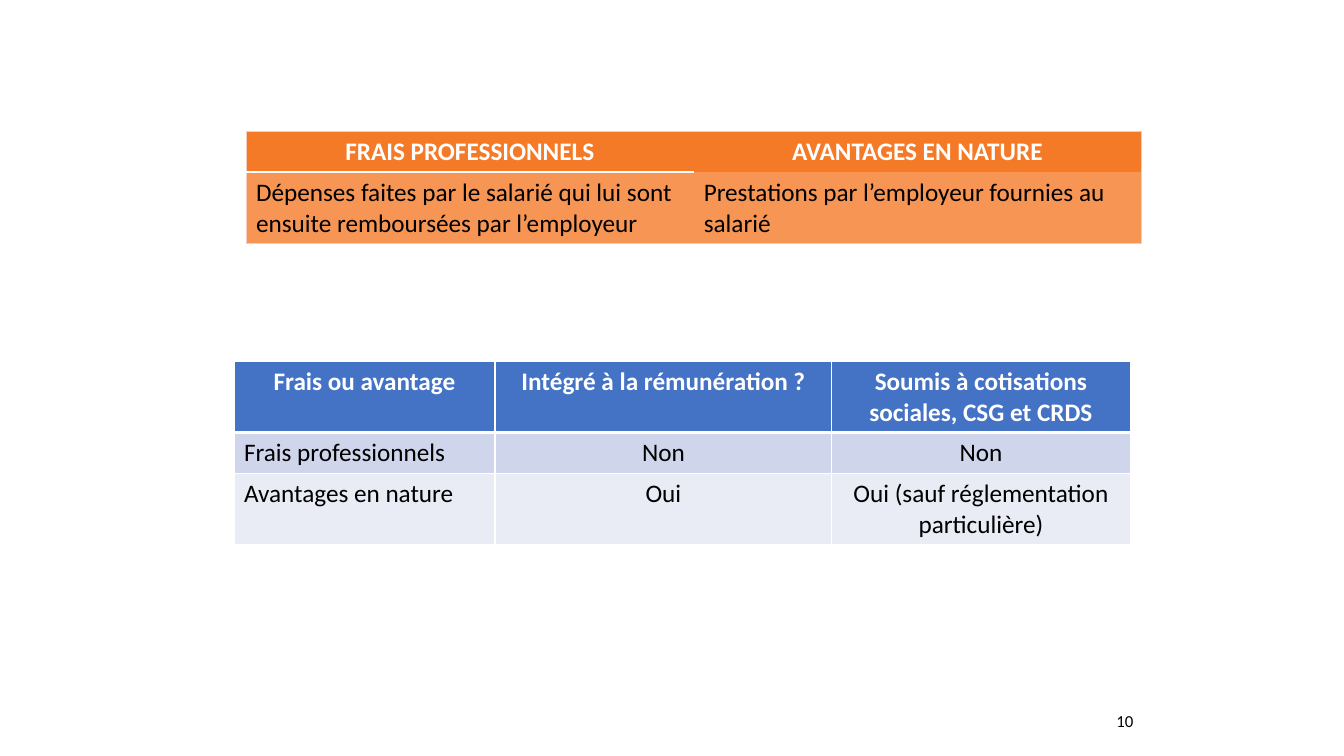
from lxml import etree
from pptx import Presentation
from pptx.dml.color import RGBColor
from pptx.enum import text as t
from pptx.oxml import ns
from pptx.util import Inches, Pt

WHITE, BLACK, PINK = "FFFFFF", "000000", "F6CCBE"
PLAIN = "{2D5ABB26-0587-4C30-8999-92F81FD0307C}"
LEFT, MID, RIGHT = t.PP_ALIGN.LEFT, t.PP_ALIGN.CENTER, t.PP_ALIGN.RIGHT


def color(code):
    """Turn a hex string into a colour."""
    return RGBColor.from_string(code)


def write(frame, words, size, ink, align, bold=False):
    """Set one formatted paragraph."""
    frame.text = words
    para = frame.paragraphs[0]
    para.alignment = align
    font = para.runs[0].font
    font.name, font.size, font.bold = "Calibri", Pt(size), bold
    font.color.rgb = color(ink)


def border(cell, sides):
    """Draw cell borders from a map of side to colour and width."""
    props = cell._tc.get_or_add_tcPr()
    for side in "LRTB":
        if side in sides:
            ink, width = sides[side]
            line = etree.SubElement(props, ns.qn("a:ln" + side), w=str(Pt(width)))
            fill = etree.SubElement(line, ns.qn("a:solidFill"))
            etree.SubElement(fill, ns.qn("a:srgbClr"), val=ink)


def grid(slide, spot, widths, heights, rows, fills, edges, aligns):
    """Add a table with a bold white header row."""
    left, top = spot
    frame = slide.shapes.add_table(
        len(rows), len(widths), Inches(left), Inches(top),
        Inches(sum(widths)), Inches(sum(heights)))
    table = frame.table
    table._tbl.tblPr.find(ns.qn("a:tableStyleId")).text = PLAIN
    for col, width in zip(table.columns, widths):
        col.width = Inches(width)
    for row, height in zip(table.rows, heights):
        row.height = Inches(height)
    for r, row in enumerate(rows):
        for c, words in enumerate(row):
            cell, head = table.cell(r, c), r == 0
            border(cell, edges(r, c))
            cell.fill.solid()
            cell.fill.fore_color.rgb = color(fills[r])
            write(cell.text_frame, words, 18, WHITE if head else BLACK,
                  MID if head else aligns[c], head)


def frame_edges(r, c):
    """Give the pink outline and the white rule under the first header."""
    sides = {"RL"[c == 0]: (PINK, 0.5), "BT"[r == 0]: (PINK, 0.5)}
    if c == 0:
        sides["TB"[r == 0]] = (WHITE, 1.5)
    return sides


def white_edges(r, c):
    """Give white rules, thicker under the header."""
    sides = dict.fromkeys("LRTB", (WHITE, 1))
    if r < 2:
        sides["TB"[r == 0]] = (WHITE, 3)
    return sides


def number(slide, words):
    """Add the page number."""
    box = slide.shapes.add_textbox(
        Inches(10.71), Inches(6.95), Inches(0.63), Inches(0.4))
    box.text_frame.word_wrap = True
    box.text_frame.vertical_anchor = t.MSO_ANCHOR.MIDDLE
    write(box.text_frame, words, 12, BLACK, RIGHT)


def main():
    """Build the slide."""
    deck = Presentation()
    deck.slide_width, deck.slide_height = Inches(13.33), Inches(7.5)
    slide = deck.slides.add_slide(deck.slide_layouts[6])
    number(slide, "10")
    grid(slide, (2.44, 1.3), [4.44, 4.44], [0.41, 0.7], [
        ["FRAIS PROFESSIONNELS", "AVANTAGES EN NATURE"],
        ["Dépenses faites par le salarié qui lui sont ensuite remboursées par l’employeur",
         "Prestations par l’employeur fournies au salarié"],
    ], ["F57A28", "F79554"], frame_edges, [LEFT, LEFT])
    grid(slide, (2.32, 3.59), [2.59, 3.34, 2.96], [0.7, 0.41, 0.7], [
        ["Frais ou avantage", "Intégré à la rémunération ?",
         "Soumis à cotisations sociales, CSG et CRDS"],
        ["Frais professionnels", "Non", "Non"],
        ["Avantages en nature", "Oui", "Oui (sauf réglementation particulière)"],
    ], ["4472C4", "CFD5EA", "E9EBF5"], white_edges, [LEFT, MID, MID])
    deck.save("out.pptx")


if __name__ == "__main__":
    main()
